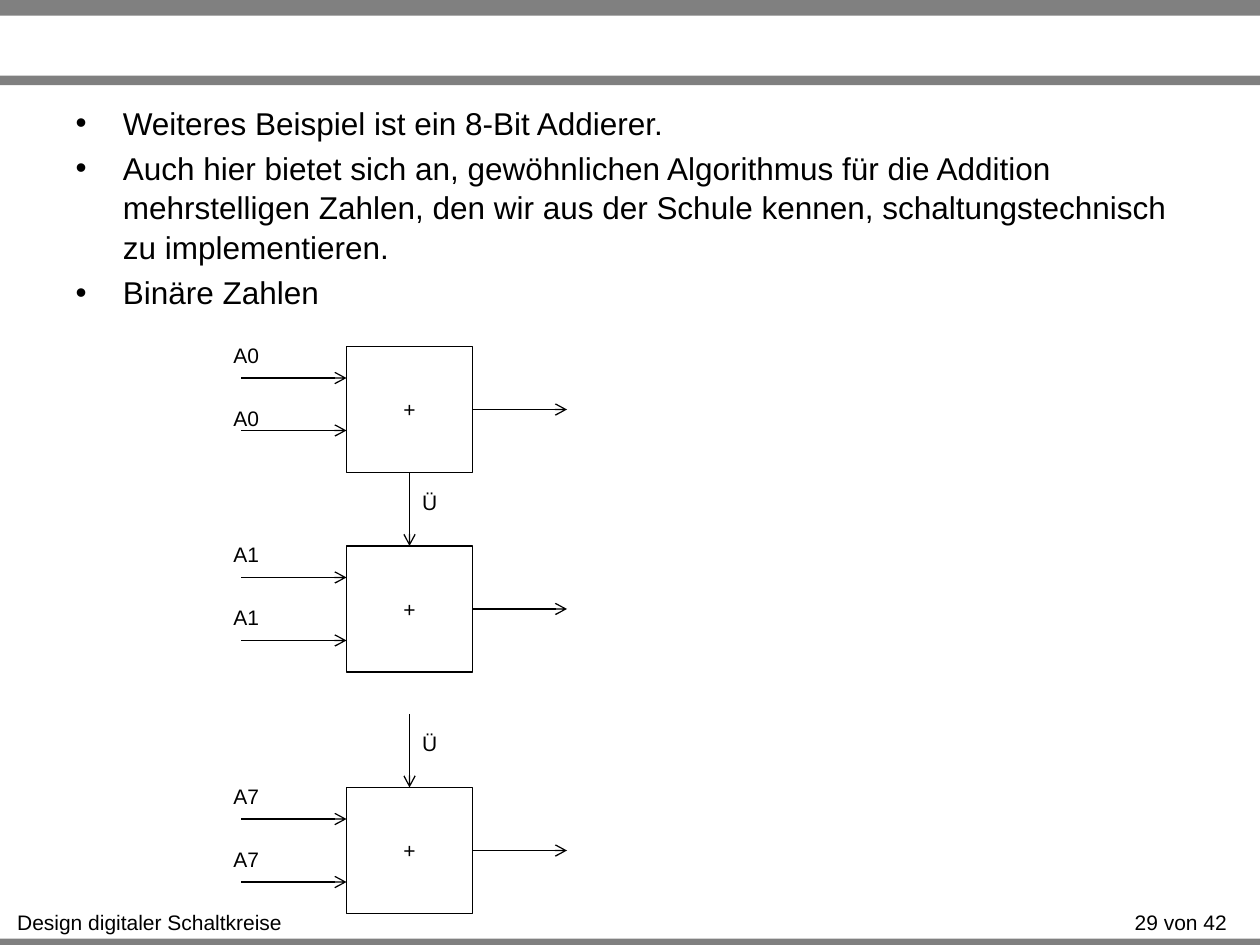
"""Builds the slide on an 8-bit adder made of chained one-bit adders."""
from lxml import etree
from pptx import Presentation
from pptx.dml.color import RGBColor
from pptx.enum.shapes import MSO_CONNECTOR, MSO_SHAPE
from pptx.enum.text import MSO_ANCHOR, MSO_AUTO_SIZE, PP_ALIGN
from pptx.oxml.ns import qn
from pptx.util import Pt

STRAIGHT = MSO_CONNECTOR.STRAIGHT
RECTANGLE = MSO_SHAPE.RECTANGLE
MIDDLE, TOP = MSO_ANCHOR.MIDDLE, MSO_ANCHOR.TOP
CENTER, LEFT = PP_ALIGN.CENTER, PP_ALIGN.LEFT
NO_FIT = MSO_AUTO_SIZE.NONE

COLORS = {name: RGBColor.from_string(value) for name, value in
          {"ink": "000000", "bar": "808080"}.items()}
BULLETS = [
    "Weiteres Beispiel ist ein 8-Bit Addierer.",
    "Auch hier bietet sich an, gewöhnlichen Algorithmus für die Addition "
    "mehrstelligen Zahlen, den wir aus der Schule kennen, "
    "schaltungstechnisch zu implementieren.",
    "Binäre Zahlen",
]
ADDER_LEFT, ADDER_SIZE = 198, 72
ADDERS = [("A0", 198, 48), ("A1", 312, 54), ("A7", 450, 54)]

deck = Presentation()
deck.slide_width, deck.slide_height = Pt(720), Pt(540)
page = deck.slides.add_slide(deck.slide_layouts[1])
shapes = page.shapes
title = shapes.title.element
title.getparent().remove(title)


def add_label(text, left, top, width):
    box = shapes.add_textbox(Pt(left), Pt(top), Pt(width), Pt(21.6))
    box.text_frame.word_wrap = False
    para = box.text_frame.paragraphs[0]
    para.text = text
    para.alignment = CENTER
    para.font.name, para.font.size = "Arial", Pt(12)
    para.font.color.rgb = COLORS["ink"]


def add_arrow(x1, y1, x2, y2):
    arrow = shapes.add_connector(STRAIGHT, Pt(x1), Pt(y1), Pt(x2), Pt(y2))
    arrow.line.color.rgb = COLORS["ink"]
    arrow.line.width = Pt(0.75)
    etree.SubElement(arrow.line._get_or_add_ln(), qn("a:tailEnd"), type="arrow")
    etree.SubElement(arrow.element.spPr, qn("a:effectLst"))


for top, height in [(536.4, 5.4), (0, 9), (43.2, 5.4)]:
    bar = shapes.add_shape(RECTANGLE, 0, Pt(top), Pt(720), Pt(height))
    bar.shadow.inherit = False
    bar.fill.solid()
    bar.fill.fore_color.rgb = COLORS["bar"]
    bar.line.fill.background()

add_label("Design digitaler Schaltkreise", 2, 516.4, 167)
add_label("29 von 42", 636, 516.4, 77.5)

body = page.placeholders[1]
body.left, body.top, body.width, body.height = Pt(36), Pt(54.7), Pt(648), Pt(155.5)
frame = body.text_frame
frame.text = "\n".join(BULLETS)
frame.auto_size = NO_FIT
frame.vertical_anchor = TOP
for index, para in enumerate(frame.paragraphs):
    properties = para._p.get_or_add_pPr()
    properties.set("marL", str(Pt(27)))
    properties.set("indent", str(Pt(-27)))
    etree.SubElement(properties, qn("a:buFont"), typeface="Arial")
    etree.SubElement(properties, qn("a:buChar"), char="•")
    para.alignment = LEFT
    para.line_spacing = 1.04
    para.space_before = Pt(3.6 if index else 0)
    para.font.name, para.font.size = "Arial", Pt(18)
    para.font.color.rgb = COLORS["ink"]

right = ADDER_LEFT + ADDER_SIZE
middle = ADDER_LEFT + ADDER_SIZE / 2
for index, (name, top, second_input) in enumerate(ADDERS):
    adder = shapes.add_shape(RECTANGLE, Pt(ADDER_LEFT), Pt(top),
                             Pt(ADDER_SIZE), Pt(ADDER_SIZE))
    adder.shadow.inherit = False
    adder.fill.background()
    adder.line.color.rgb = COLORS["ink"]
    adder.line.width = Pt(0.75)
    adder.text_frame.vertical_anchor = MIDDLE
    para = adder.text_frame.paragraphs[0]
    para.text = "+"
    para.alignment = CENTER
    para.font.name, para.font.size = "Arial", Pt(12)
    para.font.color.rgb = COLORS["ink"]

    add_arrow(right, top + ADDER_SIZE / 2, right + 54, top + ADDER_SIZE / 2)
    for offset in (18, second_input):
        add_arrow(ADDER_LEFT - 60, top + offset, ADDER_LEFT, top + offset)
    for offset in (-6, 30):
        add_label(name, 126, top + offset, 29.5)
    if index:
        add_arrow(middle, top - 42, middle, top)
        add_label("Ü", middle, top - 36, 23)

deck.save("out.pptx")
